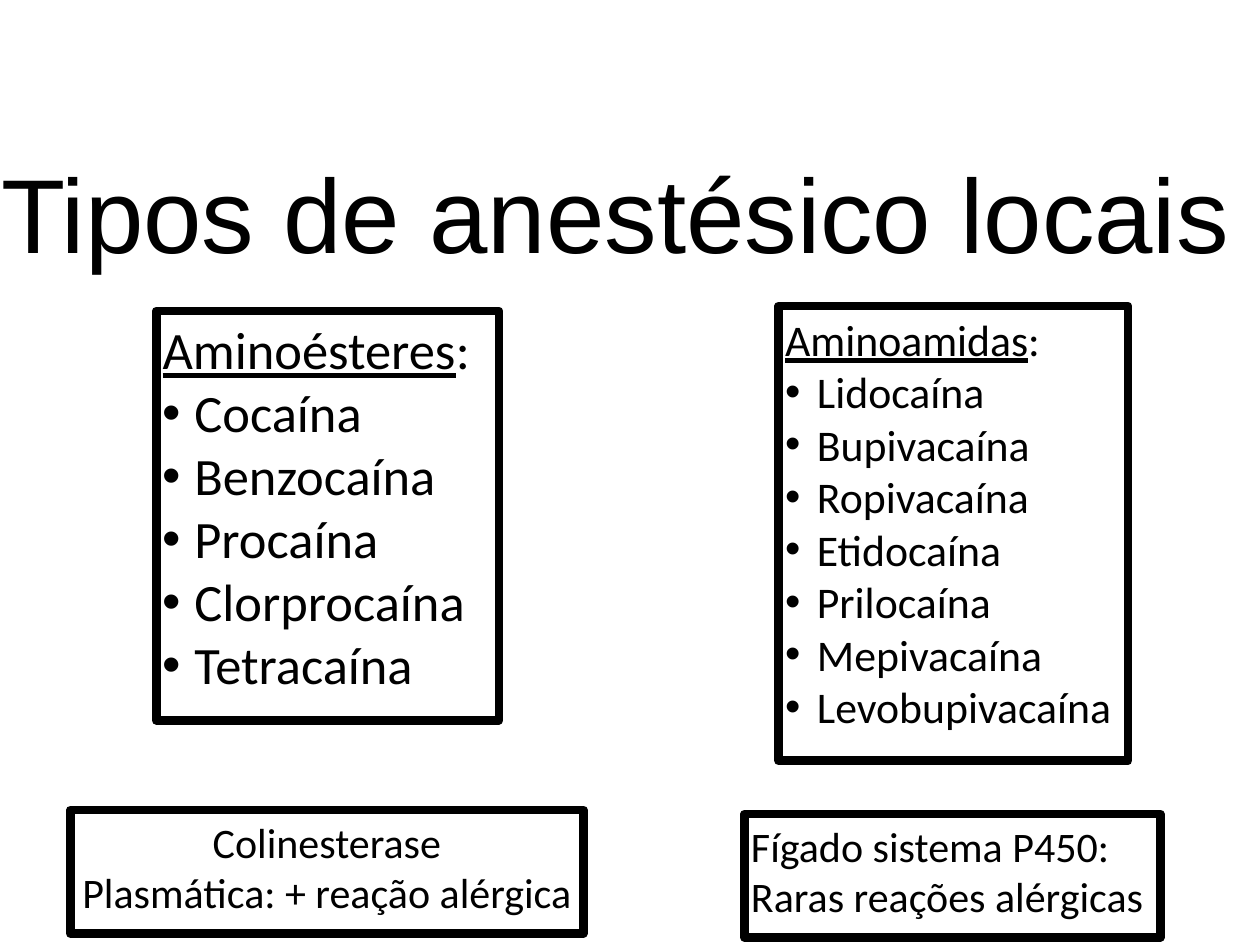
import pptx
import pptx.util
import pptx.dml.color
import pptx.enum.shapes
import pptx.enum.text
import pptx.oxml.ns
import lxml.etree

Cm = pptx.util.Cm
Pt = pptx.util.Pt
ALIGN = pptx.enum.text.PP_ALIGN
ANCHOR = pptx.enum.text.MSO_ANCHOR

COLOURS = {"ink": "000000", "paper": "FFFFFF"}
INDENT = Cm(0.64)


def colour(name):
    return pptx.dml.color.RGBColor.from_string(COLOURS[name])


def apply_format(target, values):
    for name, value in values.items():
        setattr(target, name, value)


class SlideBuilder:
    """Holds the style and the slide being built."""

    title_font = {"name": "Arial", "size": Pt(60)}
    body_font = {"name": "Calibri"}
    border_width = Pt(5)

    def __init__(self, deck):
        self.slide = deck.slides.add_slide(deck.slide_layouts[6])
        self.slide.background.fill.solid()
        self.slide.background.fill.fore_color.rgb = colour("paper")

    def set_frame(self, box, inset, anchor):
        frame = box.text_frame
        margins = dict.fromkeys(
            ("margin_left", "margin_top", "margin_right", "margin_bottom"), Cm(inset))
        apply_format(frame, {"word_wrap": True, "vertical_anchor": anchor, **margins})
        return frame

    def add_span(self, para, text, font):
        span = para.add_run()
        span.text = text
        apply_format(span.font, font)
        span.font.color.rgb = colour("ink")

    def add_bullet(self, para):
        properties = para._p.get_or_add_pPr()
        properties.set("marL", str(INDENT))
        properties.set("indent", str(-INDENT))
        for tag, attribute, value in (("a:buFont", "typeface", "Arial"),
                                      ("a:buChar", "char", "•")):
            mark = lxml.etree.SubElement(properties, pptx.oxml.ns.qn(tag))
            mark.set(attribute, value)

    def add_title(self, text, left, top, width, height):
        box = self.slide.shapes.add_textbox(Cm(left), Cm(top), Cm(width), Cm(height))
        para = self.set_frame(box, 0.15, ANCHOR.MIDDLE).paragraphs[0]
        para.alignment = ALIGN.CENTER
        self.add_span(para, text, self.title_font)

    def add_framed_box(self, left, top, width, height):
        box = self.slide.shapes.add_shape(
            pptx.enum.shapes.MSO_SHAPE.RECTANGLE,
            Cm(left), Cm(top), Cm(width), Cm(height))
        box.shadow.inherit = False
        box.fill.background()
        box.line.color.rgb = colour("ink")
        box.line.width = self.border_width
        return self.set_frame(box, 0.13, ANCHOR.TOP)

    def add_drug_list(self, heading, drugs, size, *place):
        frame = self.add_framed_box(*place)
        font = {**self.body_font, "size": Pt(size)}
        para = frame.paragraphs[0]
        para.alignment = ALIGN.LEFT
        self.add_span(para, heading, {**font, "underline": True})
        self.add_span(para, ":", font)
        for drug in drugs:
            para = frame.add_paragraph()
            para.alignment = ALIGN.LEFT
            self.add_bullet(para)
            self.add_span(para, drug, font)

    def add_note(self, lines, alignment, *place):
        frame = self.add_framed_box(*place)
        for index, line in enumerate(lines):
            para = frame.add_paragraph() if index else frame.paragraphs[0]
            para.alignment = alignment
            self.add_span(para, line, {**self.body_font, "size": Pt(24)})


def main():
    deck = pptx.Presentation()
    apply_format(deck, {"slide_width": Cm(25.4), "slide_height": Cm(19.05)})
    builder = SlideBuilder(deck)

    # Title
    builder.add_title("Tipos de anestésico locais ", -2.72, 1.27, 30.84, 5.99)

    # Two families of anaesthetics
    builder.add_drug_list(
        "Aminoamidas",
        ["Lidocaína", "Bupivacaína", "Ropivacaína", "Etidocaína", "Prilocaína",
         "Mepivacaína", "Levobupivacaína"],
        25, 15.7, 6.17, 7.04, 9.17)
    builder.add_drug_list(
        "Aminoésteres",
        ["Cocaína", "Benzocaína", "Procaína", "Clorprocaína", "Tetracaína"],
        30, 3.15, 6.27, 6.91, 8.25)

    # How each family is metabolised
    builder.add_note(["Colinesterase", "Plasmática: + reação alérgica"],
                     ALIGN.CENTER, 1.42, 16.33, 10.34, 2.49)
    builder.add_note(["Fígado sistema P450:", "Raras reações alérgicas"],
                     ALIGN.LEFT, 15.01, 16.41, 8.38, 2.49)

    deck.save("out.pptx")


if __name__ == "__main__":
    main()
